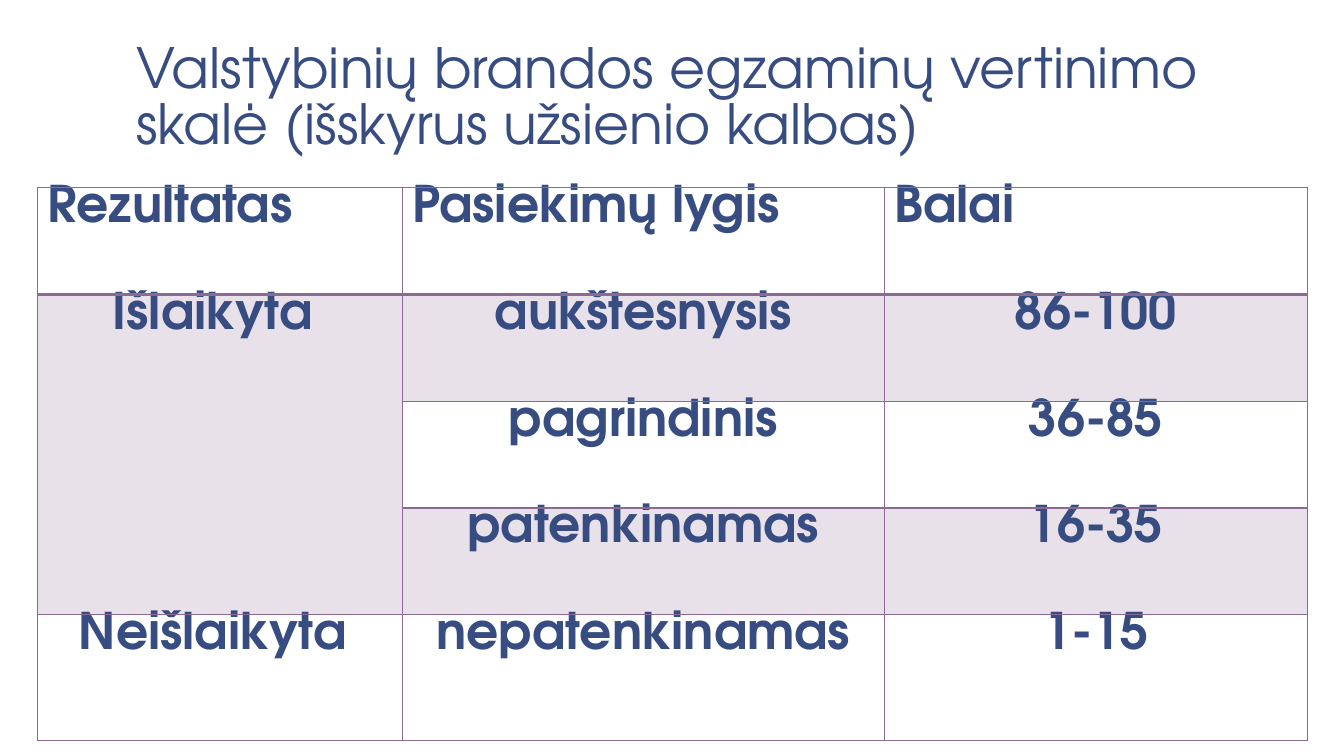
from lxml import etree
from pptx import Presentation
from pptx import util as u
from pptx.dml.color import RGBColor
from pptx.enum import text
from pptx.oxml import ns

PX = 9144
FONT = "TeX Gyre Adventor"
NAVY = RGBColor(0x37, 0x4C, 0x81)
PLUM = RGBColor(0x8B, 0x6A, 0x94)
LILAC = RGBColor(0xE8, 0xE1, 0xEA)

COLUMN_WIDTHS = [362, 478, 420]
ROW_HEIGHTS = [106, 106, 106, 106, 125]
GRADES = [
    ["Rezultatas", "Pasiekimų lygis", "Balai"],
    ["Išlaikyta ", "aukštesnysis", "86-100"],
    ["", "pagrindinis", "36-85"],
    ["", "patenkinamas", "16-35"],
    ["Neišlaikyta ", "nepatenkinamas", "1-15"],
]


def px(length):
    return u.Emu(length * PX)


def style_paragraph(para, size, bold, align, spacing):
    para.alignment = align
    para.line_spacing = spacing
    para.font.name = FONT
    para.font.size = u.Pt(size)
    para.font.bold = bold
    para.font.color.rgb = NAVY


def add_title(page, wording):
    title = page.shapes.title
    title.left, title.top, title.width, title.height = map(px, (122, 92, 1111, 70))
    frame = title.text_frame
    frame.text = wording
    frame.word_wrap = True
    frame.auto_size = text.MSO_AUTO_SIZE.NONE
    frame.vertical_anchor = text.MSO_ANCHOR.BOTTOM
    frame.margin_left = frame.margin_right = px(13)
    frame.margin_top = frame.margin_bottom = px(7)
    style_paragraph(frame.paragraphs[0], 39.6, False, text.PP_ALIGN.LEFT, 0.85)


def add_border(cell, side, points):
    properties = cell._tc.get_or_add_tcPr()
    line = etree.SubElement(properties, ns.qn(f"a:ln{side}"), w=str(u.Pt(points)))
    fill = etree.SubElement(line, ns.qn("a:solidFill"))
    etree.SubElement(fill, ns.qn("a:srgbClr"), val=str(PLUM))


def format_cell(cell, row, wording):
    for side in "LRTB":
        heavy = (row, side) in ((0, "B"), (1, "T"))
        add_border(cell, side, 2 if heavy else 1)
    if row % 2:
        cell.fill.solid()
        cell.fill.fore_color.rgb = LILAC
    else:
        cell.fill.background()
    if wording:
        cell.text = wording
        align = text.PP_ALIGN.CENTER if row else text.PP_ALIGN.LEFT
        style_paragraph(cell.text_frame.paragraphs[0], 36, True, align, 0.8)


def add_grade_table(page):
    frame = page.shapes.add_table(
        len(GRADES), len(COLUMN_WIDTHS), px(37), px(186),
        px(sum(COLUMN_WIDTHS)), px(sum(ROW_HEIGHTS)),
    )
    table = frame.table
    table.first_row = table.horz_banding = False
    for column, width in zip(table.columns, COLUMN_WIDTHS):
        column.width = px(width)
    for table_row, height in zip(table.rows, ROW_HEIGHTS):
        table_row.height = px(height)
    for row, wordings in enumerate(GRADES):
        for column, wording in enumerate(wordings):
            format_cell(table.cell(row, column), row, wording)
    table.cell(1, 0).merge(table.cell(3, 0))


def main():
    deck = Presentation()
    deck.slide_width, deck.slide_height = px(1333), px(750)
    page = deck.slides.add_slide(deck.slide_layouts[5])
    add_title(page, "Valstybinių brandos egzaminų vertinimo skalė (išskyrus užsienio kalbas)")
    add_grade_table(page)
    deck.save("out.pptx")


if __name__ == "__main__":
    main()
